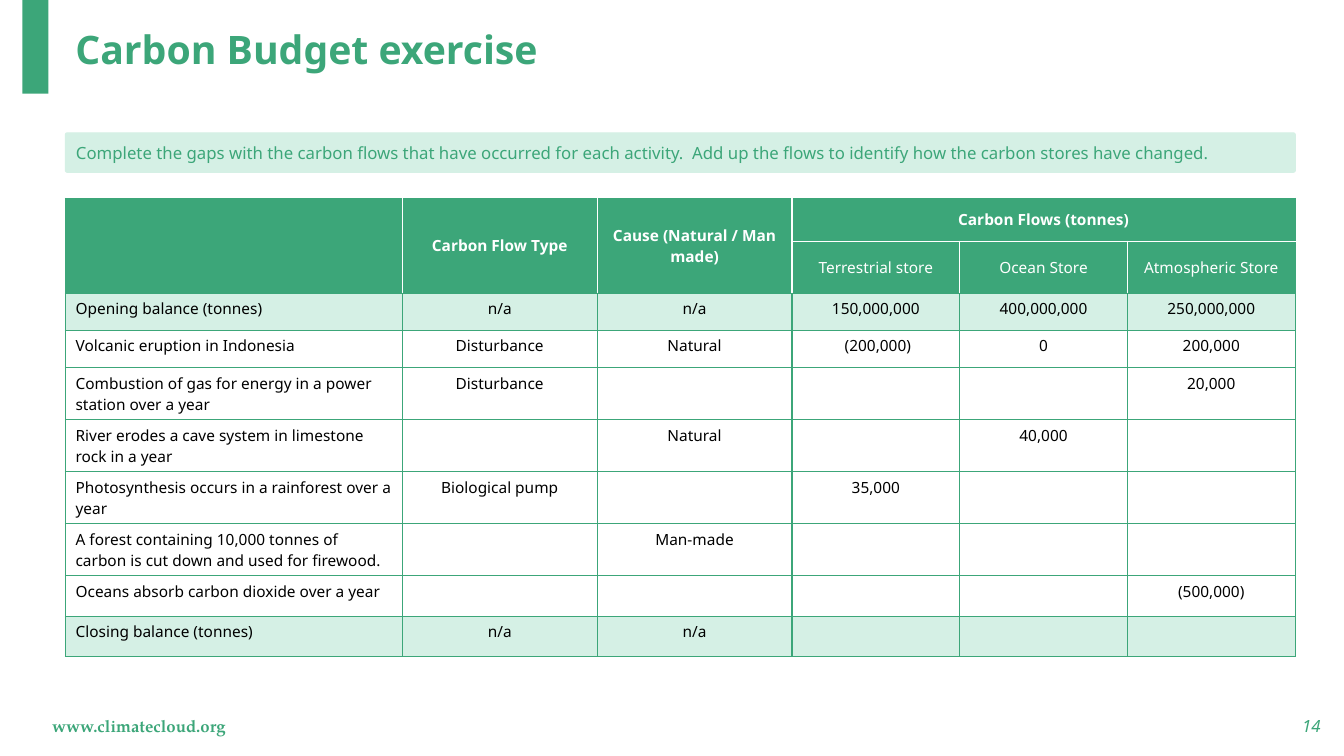
from lxml.etree import SubElement
from pptx import Presentation
from pptx.dml.color import RGBColor
from pptx.enum.shapes import MSO_SHAPE
from pptx.enum.text import MSO_ANCHOR, PP_ALIGN
from pptx.oxml.ns import qn
from pptx.util import Pt

GREEN, PALE, WHITE, BLACK = "3CA679", "D5F0E5", "FFFFFF", "000000"
SANS, SERIF = "Noto Sans", "TeX Gyre Pagella"
LEFT, WIDTH = 46.8, 878.4


def rgb(color):
    return RGBColor.from_string(color)


def add_text(tf, text, size, color, bold=False, italic=False, font=SANS, align=PP_ALIGN.LEFT):
    tf.word_wrap = True
    p = tf.paragraphs[0]
    p.alignment = align
    r = p.add_run()
    r.text = text
    r.font.name, r.font.size = font, Pt(size)
    r.font.bold, r.font.italic = bold, italic
    r.font.color.rgb = rgb(color)
    return p


prs = Presentation()
prs.slide_width, prs.slide_height = Pt(960), Pt(540)
s = prs.slides.add_slide(prs.slide_layouts[6])

# Accent bar and instruction banner
for kind, x, y, w, h, color in [
    (MSO_SHAPE.RECTANGLE, 16, 0, 18.7, 67, GREEN),
    (MSO_SHAPE.ROUNDED_RECTANGLE, LEFT, 95, WIDTH, 28, PALE),
]:
    sp = s.shapes.add_shape(kind, Pt(x), Pt(y), Pt(w), Pt(h))
    sp.shadow.inherit = False
    sp.fill.solid()
    sp.fill.fore_color.rgb = rgb(color)
    if color == GREEN:
        sp.line.fill.background()
    else:
        sp.line.color.rgb = rgb(color)
        sp.line.width = Pt(1)
banner = sp
banner.adjustments[0] = 0.05
banner.text_frame.vertical_anchor = MSO_ANCHOR.MIDDLE
add_text(banner.text_frame, "Complete the gaps with the carbon flows that have occurred for each activity.  "
         "Add up the flows to identify how the carbon stores have changed.", 12, GREEN)

# Title and footer
for x, y, w, h, text, size, style in [
    (LEFT, 9.4, 772.6, 54.7, "Carbon Budget exercise", 28, {"bold": True}),
    (30.2, 504, 324, 28.8, "www.climatecloud.org", 12, {"bold": True, "font": SERIF}),
    (734.4, 504, 216, 28.8, "14", 12, {"italic": True, "align": PP_ALIGN.RIGHT}),
]:
    tf = s.shapes.add_textbox(Pt(x), Pt(y), Pt(w), Pt(h)).text_frame
    tf.vertical_anchor = MSO_ANCHOR.MIDDLE
    p = add_text(tf, text, size, GREEN, **style)
    if size == 28:
        p.line_spacing = 0.9

# Carbon budget table
rows = [
    ["", "Carbon Flow Type", "Cause (Natural / Man made)", "Carbon Flows (tonnes)", "", ""],
    ["", "", "", "Terrestrial store", "Ocean Store", "Atmospheric Store"],
    ["Opening balance (tonnes)", "n/a", "n/a", "150,000,000", "400,000,000", "250,000,000"],
    ["Volcanic eruption in Indonesia", "Disturbance", "Natural", " (200,000)", "0", "200,000"],
    ["Combustion of gas for energy in a power station over a year", "Disturbance", "", "", "", "20,000"],
    ["River erodes a cave system in limestone rock in a year", "", "Natural", "", "40,000", ""],
    ["Photosynthesis occurs in a rainforest over a year", "Biological pump", "", "35,000", "", ""],
    ["A forest containing 10,000 tonnes of carbon is cut down and used for firewood.",
     "", "Man-made", "", "", ""],
    ["Oceans absorb carbon dioxide over a year", "", "", "", "", "(500,000)"],
    ["Closing balance (tonnes)", "n/a", "n/a", "", "", ""],
]
col_widths = [240.6, 139.2, 139.2, 119.8, 119.8, 119.8]
row_heights = [30.6, 37.2, 26.5, 26.5, 37.2, 37.2, 37.2, 37.2, 26.5, 26.5]
table = s.shapes.add_table(len(rows), len(col_widths), Pt(LEFT), Pt(141.8),
                           Pt(WIDTH), Pt(sum(row_heights))).table
table.first_row = table.horz_banding = False
for col, w in zip(table.columns, col_widths):
    col.width = Pt(w)
for row, h in zip(table.rows, row_heights):
    row.height = Pt(h)

for i, row in enumerate(rows):
    header = i < 2
    fill = GREEN if header else PALE if i in (2, len(rows) - 1) else WHITE
    for j, text in enumerate(row):
        cell = table.cell(i, j)
        cell.vertical_anchor = MSO_ANCHOR.MIDDLE if header else MSO_ANCHOR.TOP
        add_text(cell.text_frame, text, 11, WHITE if header else BLACK, bold=i == 0,
                 align=PP_ALIGN.CENTER if j else PP_ALIGN.LEFT)
        # White rules inside the header, green elsewhere
        flows_heading = i == 0 and j > 2
        white_sides = {
            "a:lnL": header and j > 0,
            "a:lnR": header and j < 5 and not flows_heading,
            "a:lnT": i == 1 and j > 2,
            "a:lnB": flows_heading,
        }
        for side, white in white_sides.items():
            ln = SubElement(cell._tc.get_or_add_tcPr(), qn(side), w=str(Pt(1)))
            color_fill = SubElement(ln, qn("a:solidFill"))
            SubElement(color_fill, qn("a:srgbClr"), val=WHITE if white else GREEN)
        cell.fill.solid()
        cell.fill.fore_color.rgb = rgb(fill)

for j in range(3):
    table.cell(0, j).merge(table.cell(1, j))
table.cell(0, 3).merge(table.cell(0, 5))

prs.save("out.pptx")
